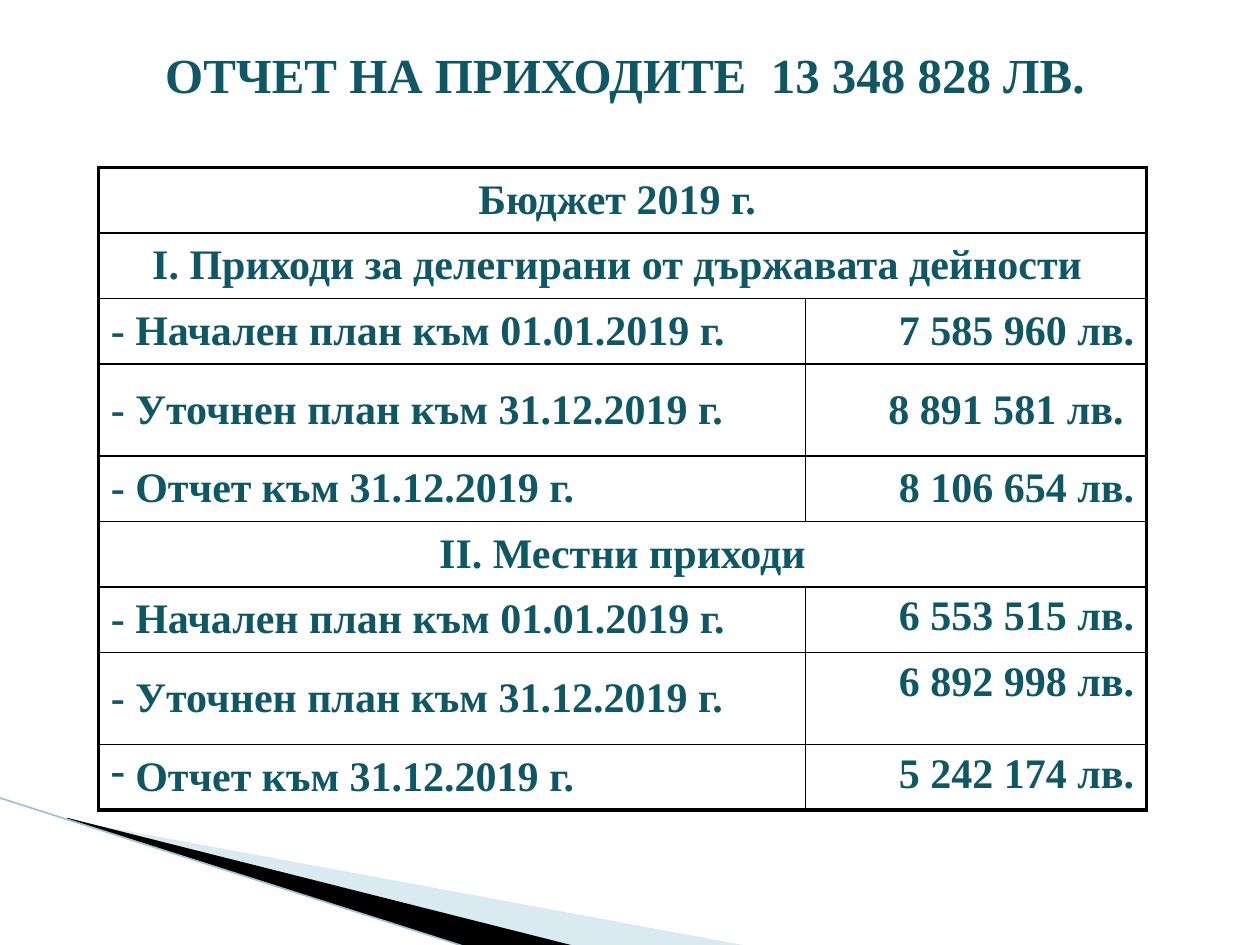
from pptx import Presentation
from pptx.dml.color import RGBColor
from pptx.enum.shapes import MSO_CONNECTOR
from pptx.enum.text import MSO_ANCHOR as Anchor, MSO_AUTO_SIZE as AutoSize, PP_ALIGN as Align
from pptx.oxml.ns import qn
from pptx.util import Inches, Pt
from lxml.etree import SubElement

BLACK = "000000"
THICK, ROW_RULE, COLUMN_RULE = 2.25, 1, 0.75


def color(value):
    return RGBColor.from_string(value)


class SlideBuilder:
    font_name = "Times New Roman"
    text_color = "105766"

    def __init__(self, slide):
        self.slide = slide

    def style(self, paragraph, size, align):
        paragraph.alignment = align
        for run in paragraph.runs:
            font = run.font
            font.name, font.size, font.bold = self.font_name, Pt(size), True
            font.color.rgb = color(self.text_color)

    def title(self, text, left, top, width, height):
        title = self.slide.shapes.title
        title.left, title.top = Inches(left), Inches(top)
        title.width, title.height = Inches(width), Inches(height)
        frame = title.text_frame
        frame.text = text
        frame.word_wrap = True
        frame.auto_size = AutoSize.NONE
        frame.vertical_anchor = Anchor.MIDDLE
        paragraph = frame.paragraphs[0]
        paragraph.line_spacing = 0.8
        self.style(paragraph, 28, Align.CENTER)

    def wedge(self, points, fill, opacity=100):
        corners = [(Inches(x), Inches(y)) for x, y in points]
        builder = self.slide.shapes.build_freeform(*corners[0])
        builder.add_line_segments(corners[1:])
        shape = builder.convert_to_shape()
        shape.shadow.inherit = False
        shape.line.fill.background()
        shape.fill.solid()
        shape.fill.fore_color.rgb = color(fill)
        if opacity < 100:
            rgb = shape.fill._xPr.find(".//" + qn("a:srgbClr"))
            SubElement(rgb, qn("a:alpha"), val=str(opacity * 1000))

    def line(self, start, end, stroke, width):
        ends = [Inches(v) for v in (*start, *end)]
        connector = self.slide.shapes.add_connector(MSO_CONNECTOR.STRAIGHT, *ends)
        connector.line.color.rgb = color(stroke)
        connector.line.width = Pt(width)
        SubElement(connector._element.spPr, qn("a:effectLst"))

    def table(self, left, top, widths, heights):
        table = self.slide.shapes.add_table(
            len(heights), len(widths), Inches(left), Inches(top),
            Inches(sum(widths)), Inches(sum(heights))).table
        table.first_row = table.horz_banding = False
        for column, width in zip(table.columns, widths):
            column.width = Inches(width)
        for row, height in zip(table.rows, heights):
            row.height = Inches(height)
        return table

    def cell(self, cell, text, align, anchor, borders, bullet=None):
        cell.text = text
        cell.vertical_anchor = anchor
        cell.margin_left = cell.margin_right = Inches(0.1)
        cell.margin_top = cell.margin_bottom = Inches(0.05)
        paragraph = cell.text_frame.paragraphs[0]
        if bullet:
            SubElement(paragraph._p.get_or_add_pPr(), qn("a:buChar"), char=bullet)
        self.style(paragraph, 24, align)
        self.borders(cell, borders)
        cell.fill.background()

    def borders(self, cell, widths):
        properties = cell._tc.get_or_add_tcPr()
        for side, width in zip("LRTB", widths):
            edge = SubElement(properties, qn(f"a:ln{side}"), w=str(Pt(width)))
            SubElement(SubElement(edge, qn("a:solidFill")), qn("a:srgbClr"), val=BLACK)


def main():
    prs = Presentation()
    prs.slide_width, prs.slide_height = Inches(10), Inches(7.5)
    page = SlideBuilder(prs.slides.add_slide(prs.slide_layouts[5]))

    # Corner decoration
    page.wedge([(0.55, 6.51), (5.95, 7.51), (4.56, 7.51), (0.55, 6.5)], "A0CBDC", 40)
    page.wedge([(0.53, 6.49), (4.57, 7.51), (3.72, 7.52), (0.54, 6.5)], BLACK)
    page.line((-0.01, 6.33), (3.71, 7.52), "97C5D8", 0.95)

    page.title("ОТЧЕТ НА ПРИХОДИТЕ  13 348 828 ЛВ.", 0.51, 0.39, 8.9, 0.48)

    # Revenue table: a row without an amount is a heading across both columns
    initial, revised = "- Начален план към 01.01.2019 г.", "- Уточнен план към 31.12.2019 г."
    report = "Отчет към 31.12.2019 г."
    middle, upper = Anchor.MIDDLE, Anchor.TOP
    rows = [
        ("Бюджет 2019 г. ", None, middle),
        ("І. Приходи за делегирани от държавата дейности ", None, middle),
        (initial, "7 585 960 лв.", middle),
        (revised, "8 891 581 лв. ", middle),
        ("- " + report, "8 106 654 лв.", middle),
        ("ІІ. Местни приходи", None, middle),
        (initial, "6 553 515 лв.", upper),
        (revised, "6 892 998 лв.", upper),
        (" " + report, "5 242 174 лв.", upper),
    ]
    heights = [0.73 if label == revised else 0.52 for label, _, _ in rows]
    table = page.table(0.78, 1.33, [5.61, 2.71], heights)
    last = len(rows) - 1
    for i, (label, amount, anchor) in enumerate(rows):
        rules = (THICK if i == 0 else ROW_RULE, THICK if i == last else ROW_RULE)
        name_cell, amount_cell = table.cell(i, 0), table.cell(i, 1)
        if amount is None:
            name_cell.merge(amount_cell)
            page.cell(name_cell, label, Align.CENTER, middle, (THICK, THICK, *rules))
            page.borders(amount_cell, (THICK, THICK, *rules))
        else:
            page.cell(name_cell, label, Align.LEFT, middle, (THICK, COLUMN_RULE, *rules),
                      bullet="-" if i == last else None)
            page.cell(amount_cell, amount, Align.RIGHT, anchor, (COLUMN_RULE, THICK, *rules))

    prs.save("out.pptx")


if __name__ == "__main__":
    main()
